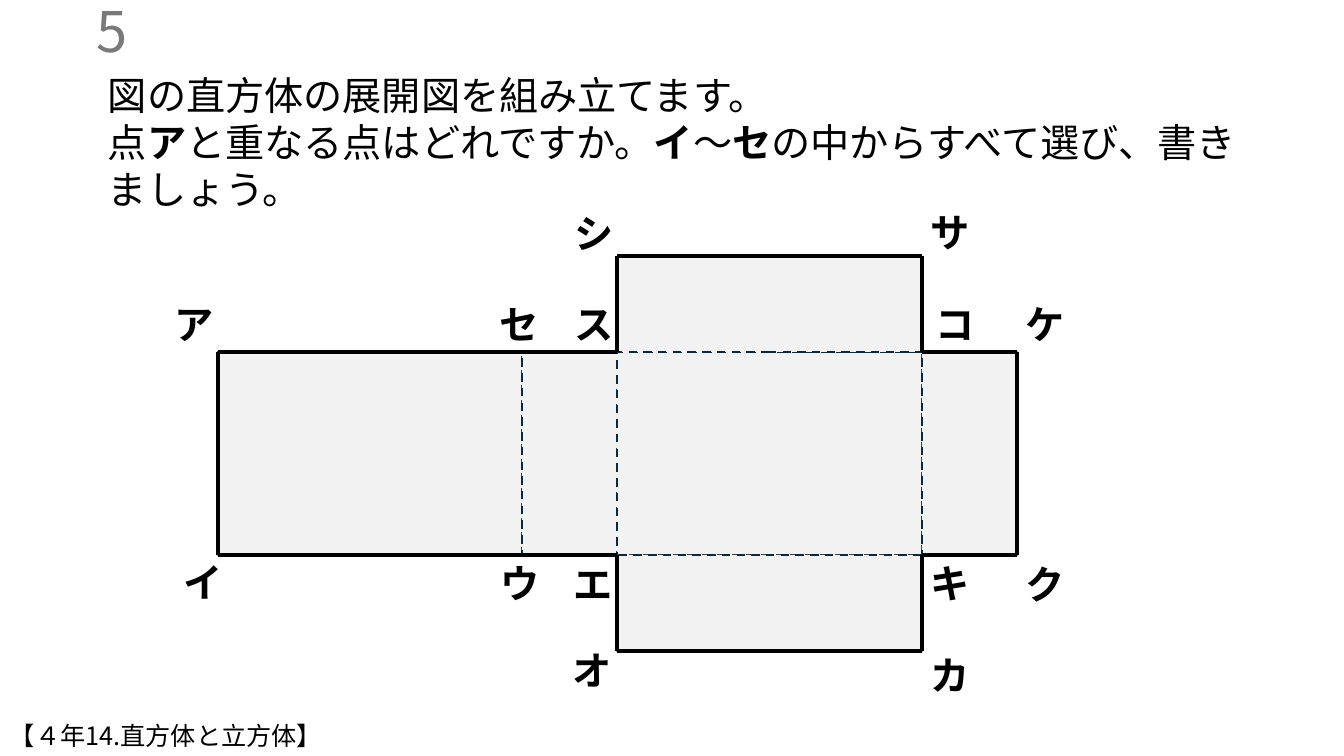
from lxml import etree
from pptx import Presentation
from pptx.dml.color import RGBColor
from pptx.enum.dml import MSO_LINE
from pptx.enum.shapes import MSO_CONNECTOR, MSO_SHAPE
from pptx.enum.text import MSO_ANCHOR, MSO_AUTO_SIZE, PP_ALIGN
from pptx.oxml.ns import qn
from pptx.util import Pt

FONT = "Noto Sans CJK JP"
COLUMNS = [0, 304, 399, 704, 799]
ROWS = [0, 96, 299, 395]
PANELS = [(0, 1), (1, 1), (2, 1), (3, 1), (2, 0), (2, 2)]
CORNERS = [
    ("ア", 0, 1, -53, -57), ("イ", 0, 2, -44, -2), ("ウ", 1, 2, -31, -1),
    ("エ", 2, 2, -53, 0), ("オ", 2, 3, -54, -10), ("カ", 3, 3, -1, -5),
    ("キ", 3, 2, -1, -1), ("ク", 4, 2, -1, 0), ("ケ", 4, 1, -1, -57),
    ("コ", 3, 1, 4, -57), ("サ", 3, 0, -1, -53), ("シ", 2, 0, -52, -52),
    ("ス", 2, 1, -52, -57), ("セ", 1, 1, -32, -57),
]


def px(length):
    """Turn px into EMU."""
    return round(length * 914400 / 100.8)


def color(value):
    """Turn a hex string into a colour."""
    return RGBColor.from_string(value)


def style_span(span, size, bold=False, tint="000000"):
    """Set the font of one run for Latin and Japanese letters."""
    span.font.name = FONT
    span.font.size = Pt(size)
    span.font.bold = bold
    span.font.color.rgb = color(tint)
    east_asian = etree.SubElement(span._r.get_or_add_rPr(), qn("a:ea"))
    east_asian.set("typeface", FONT)


def add_text(page, left, top, width, height, lines, size, wrap=True):
    """Add a text box whose lines are lists of (text, bold) spans."""
    box = page.shapes.add_textbox(px(left), px(top), px(width), px(height))
    frame = box.text_frame
    frame.word_wrap = wrap
    for index, line in enumerate(lines):
        para = frame.add_paragraph() if index else frame.paragraphs[0]
        para.line_spacing = Pt(size * 1.2)
        for text, bold in line:
            span = para.add_run()
            span.text = text
            style_span(span, size, bold)


def add_number(page, left, top, width, height):
    """Put the question number in the title placeholder."""
    title = page.shapes.title
    title.left, title.top = px(left), px(top)
    title.width, title.height = px(width), px(height)
    frame = title.text_frame
    frame.text = "5"
    frame.auto_size = MSO_AUTO_SIZE.NONE
    frame.vertical_anchor = MSO_ANCHOR.MIDDLE
    para = frame.paragraphs[0]
    para.alignment = PP_ALIGN.RIGHT
    style_span(para.runs[0], 40, tint="797979")


def add_question(page, left, top, width, height):
    """Add the question text."""
    lines = [
        [("図の直方体の展開図を組み立てます。", False)],
        [("点", False), ("ア", True), ("と重なる点はどれですか。", False),
         ("イ", True), ("〜", False), ("セ", True),
         ("の中からすべて選び、書きましょう。", False)],
    ]
    add_text(page, left, top, width, height, lines, 28)


def add_edge(page, start, end):
    """Draw one solid edge of the net."""
    edge = page.shapes.add_connector(
        MSO_CONNECTOR.STRAIGHT, *map(px, start), *map(px, end))
    edge.line.color.rgb = color("000000")
    edge.line.width = Pt(3)
    etree.SubElement(edge._element.spPr, qn("a:effectLst"))


def add_net(page, left, top):
    """Draw the net with its panels, outline and corner letters."""
    for column, row in PANELS:
        panel = page.shapes.add_shape(
            MSO_SHAPE.RECTANGLE,
            px(left + COLUMNS[column]), px(top + ROWS[row]),
            px(COLUMNS[column + 1] - COLUMNS[column]),
            px(ROWS[row + 1] - ROWS[row]))
        panel.shadow.inherit = False
        panel.fill.solid()
        panel.fill.fore_color.rgb = color("F2F2F2")
        panel.line.color.rgb = color("092A39")
        panel.line.width = Pt(1.5)
        panel.line.dash_style = MSO_LINE.DASH
    points = [(left + COLUMNS[column], top + ROWS[row])
              for letter, column, row, shift, drop in CORNERS
              if letter not in "ウセ"]
    for start, end in zip(points, points[1:] + points[:1]):
        add_edge(page, start, end)
    for letter, column, row, shift, drop in CORNERS:
        add_text(page, left + COLUMNS[column] + shift, top + ROWS[row] + drop,
                 59, 57, [[(letter, True)]], 28, wrap=False)


def main():
    """Build the slide and save it."""
    deck = Presentation()
    deck.slide_width, deck.slide_height = px(1344), px(756)
    page = deck.slides.add_slide(deck.slide_layouts[5])
    add_question(page, 98, 66, 1177, 152)
    add_number(page, 0, 10, 138, 40)
    add_net(page, 218, 256)
    add_text(page, 0, 715, 755, 40, [[("【４年14.直方体と立方体】", False)]], 18)
    deck.save("out.pptx")


if __name__ == "__main__":
    main()
